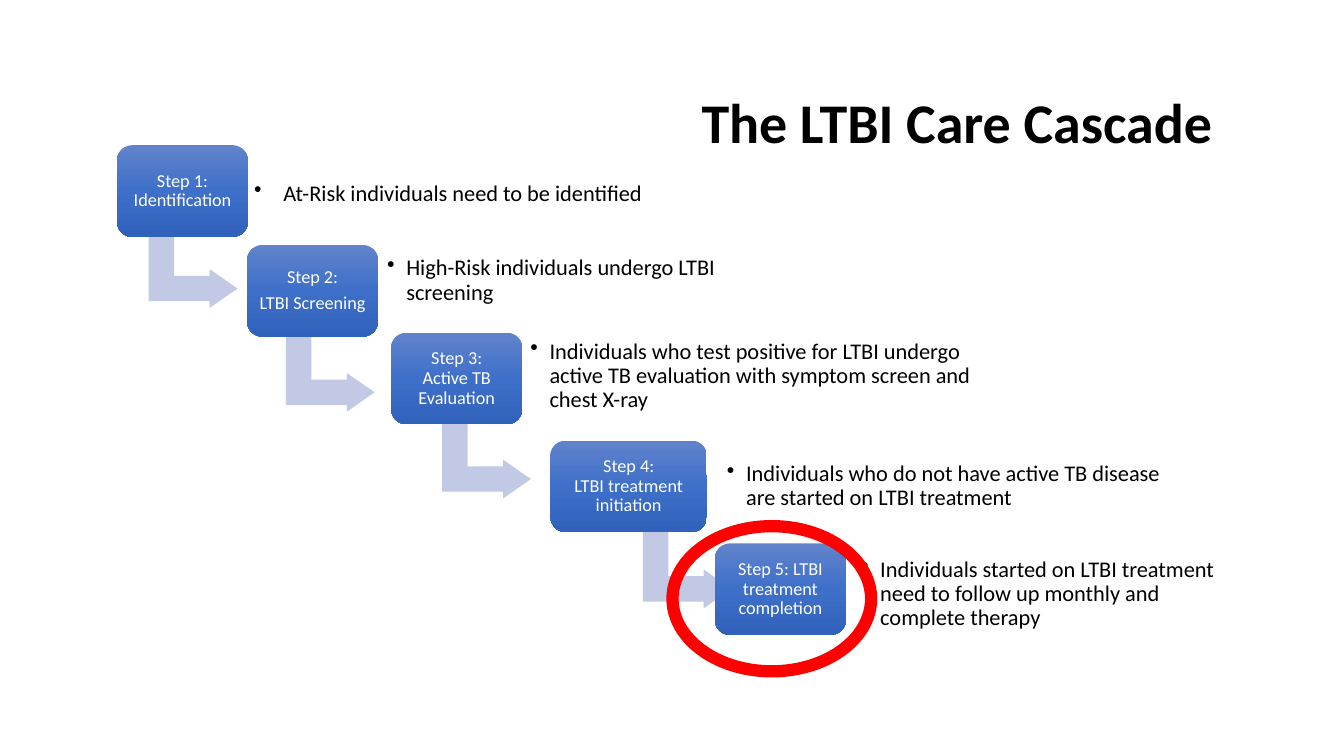
"""Builds the LTBI care cascade slide: five steps descending to treatment completion."""
import copy

import pptx
import pptx.dml.color
import pptx.enum.shapes
import pptx.enum.text
import pptx.oxml.ns
import pptx.util

PX = 9144
RGB = pptx.dml.color.RGBColor.from_string
SHAPES = pptx.enum.shapes.MSO_SHAPE
ALIGN = pptx.enum.text.PP_ALIGN
qn = pptx.oxml.ns.qn

THEME = {
    "font": "Calibri",
    "title": {"size": 40, "color": "000000", "bold": True},
    "step": {"size": 13, "color": "FFFFFF", "bold": False},
    "detail": {"size": 16, "color": "000000", "bold": False},
    "step_gradient": [(0, "6183CB"), (0.5, "3E70CA"), (1, "3062BB")],
    "arrow": "C1C9E4",
    "highlight": "FF0000",
    "highlight_width": 8.75,
}

STEPS = [
    {"box": (116, 144, 130, 91), "label": "Step 1: Identification", "gap": 4.5,
     "detail_box": (245, 156, 401, 73), "indent": 29, "arrow": (153, 223),
     "detail": "At-Risk individuals need to be identified"},
    {"box": (245, 243, 130, 91), "label": "Step 2:\nLTBI Screening", "gap": 4.5,
     "detail_box": (377, 242, 394, 73), "indent": 19, "arrow": (289, 326),
     "detail": "High-Risk individuals undergo LTBI screening"},
    {"box": (388, 330, 130, 91), "label": "Step 3:\nActive TB Evaluation", "gap": 0,
     "detail_box": (519, 322, 457, 102), "indent": 19, "arrow": (444, 412),
     "detail": "Individuals who test positive for LTBI undergo active TB evaluation "
               "with symptom screen and chest X-ray"},
    {"box": (546, 437, 155, 91), "label": "Step 4:\nLTBI treatment initiation", "gap": 0,
     "detail_box": (714, 446, 456, 73), "indent": 19, "arrow": (643, 521),
     "detail": "Individuals who do not have active TB disease are started on LTBI treatment"},
    {"box": (709, 539, 130, 91), "label": "Step 5: LTBI treatment completion", "gap": 0,
     "detail_box": (847, 553, 379, 73), "indent": 19, "arrow": None,
     "detail": "Individuals started on LTBI treatment need to follow up monthly "
               "and complete therapy"},
]


def px(*lengths):
    return [length * PX for length in lengths]


def write(frame, text, style, align, margins, gap=0):
    frame.text = text
    side, edge = px(*margins)
    frame_format = {
        "word_wrap": True,
        "vertical_anchor": pptx.enum.text.MSO_ANCHOR.MIDDLE,
        "margin_left": side, "margin_right": side,
        "margin_top": edge, "margin_bottom": edge,
    }
    for name, value in frame_format.items():
        setattr(frame, name, value)
    paragraph_format = {"alignment": align, "line_spacing": 0.9,
                        "space_before": pptx.util.Pt(0), "space_after": pptx.util.Pt(gap)}
    font_format = {"name": THEME["font"], "size": pptx.util.Pt(THEME[style]["size"]),
                   "bold": THEME[style]["bold"]}
    for paragraph in frame.paragraphs:
        for name, value in paragraph_format.items():
            setattr(paragraph, name, value)
        for run in paragraph.runs:
            for name, value in font_format.items():
                setattr(run.font, name, value)
            run.font.color.rgb = RGB(THEME[style]["color"])


deck = pptx.Presentation()
deck.slide_width, deck.slide_height = px(1333, 750)
slide = deck.slides.add_slide(deck.slide_layouts[6])

title = slide.shapes.add_textbox(*px(686, 84, 1150, 81))
write(title.text_frame, "The LTBI Care Cascade", "title", ALIGN.LEFT, (10, 5))

for step in STEPS:
    if step["arrow"]:
        arrow = slide.shapes.add_shape(SHAPES.BENT_UP_ARROW, *px(*step["arrow"], 77, 88))
        arrow.rotation = 90
        arrow.shadow.inherit = False
        for index, ratio in enumerate((0.328, 0.25, 0.358)):
            arrow.adjustments[index] = ratio
        arrow.fill.solid()
        arrow.fill.fore_color.rgb = RGB(THEME["arrow"])
        arrow.line.fill.background()

    box = slide.shapes.add_shape(SHAPES.ROUNDED_RECTANGLE, *px(*step["box"]))
    box.shadow.inherit = False
    box.line.fill.background()
    box.fill.gradient()
    box.fill.gradient_angle = 270
    stop_list = box.element.find(".//" + qn("a:gsLst"))
    stop_list.append(copy.deepcopy(stop_list[0]))
    for stop, (position, color) in zip(box.fill.gradient_stops, THEME["step_gradient"]):
        stop.position = position
        stop.color.rgb = RGB(color)
    write(box.text_frame, step["label"], "step", ALIGN.CENTER, (5, 5), step["gap"])

    detail = slide.shapes.add_textbox(*px(*step["detail_box"]))
    write(detail.text_frame, step["detail"], "detail", ALIGN.LEFT, (7, 7))
    properties = detail.text_frame.paragraphs[0]._p.get_or_add_pPr()
    indent = step["indent"] * PX
    properties.set("marL", str(indent))
    properties.set("indent", str(-indent))
    bullet = properties.makeelement(qn("a:buChar"), {"char": "•"})
    properties.append(bullet)

highlight = slide.shapes.add_shape(SHAPES.OVAL, *px(667, 522, 197, 144))
highlight.shadow.inherit = False
highlight.fill.background()
highlight.line.color.rgb = RGB(THEME["highlight"])
highlight.line.width = pptx.util.Pt(THEME["highlight_width"])

deck.save("out.pptx")
